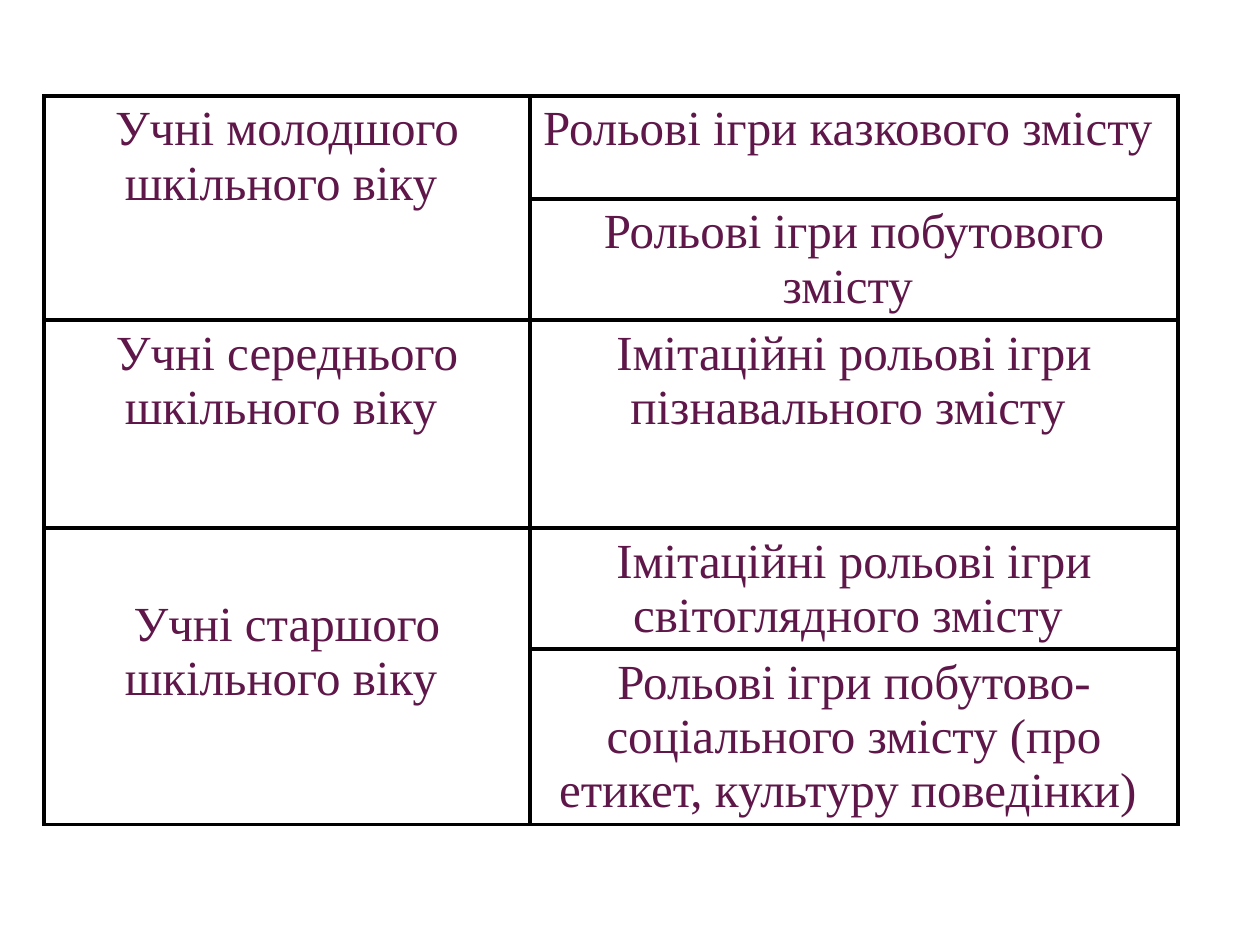
from dataclasses import dataclass

from lxml import etree
from pptx import Presentation
from pptx.dml.color import RGBColor
from pptx.enum.text import PP_ALIGN
from pptx.oxml.ns import qn
from pptx.util import Emu, Pt

CENTER = PP_ALIGN.CENTER
SCALE = 914400 // 126


@dataclass(frozen=True)
class Theme:
    font: str = "Times New Roman"
    size: int = 28
    ink: str = "5F174A"
    line: str = "000000"
    weight: float = 2.25


THEME = Theme()
LEFT, TOP = 44, 96
COLS = [486, 648]
ROWS = [103, 105, 208, 95, 113]
PAD = 70  # lowers the last age group by about one line

# Row, rows spanned, text, top margin
AGES = [
    (0, 2, "Учні молодшого шкільного віку ", None),
    (2, 1, "Учні середнього шкільного віку ", None),
    (3, 2, "Учні старшого шкільного віку ", PAD),
]
GAMES = [
    "Рольові ігри казкового змісту ",
    "Рольові ігри побутового змісту ",
    "Імітаційні рольові ігри пізнавального змісту ",
    "Імітаційні рольові ігри світоглядного змісту ",
    "Рольові ігри побутово-соціального змісту (про етикет, культуру поведінки) ",
]


def px(n):
    return Emu(n * SCALE)


def put_text(cell, text, size=THEME.size, color=THEME.ink, align=CENTER, top=None):
    if top is not None:
        cell.margin_top = px(top)
    para = cell.text_frame.paragraphs[0]
    para.alignment = align
    run = para.add_run()
    run.text = text
    run.font.name = THEME.font
    run.font.size = Pt(size)
    run.font.color.rgb = RGBColor.from_string(color)


def frame_cell(cell):
    """Draw all four borders and leave the cell unfilled."""
    props = cell._tc.get_or_add_tcPr()
    for side in ("lnL", "lnR", "lnT", "lnB"):
        line = etree.SubElement(props, qn(f"a:{side}"), w=str(Pt(THEME.weight)))
        fill = etree.SubElement(line, qn("a:solidFill"))
        etree.SubElement(fill, qn("a:srgbClr"), val=THEME.line)
    cell.fill.background()


def add_grid(slide):
    size = px(sum(COLS)), px(sum(ROWS))
    shape = slide.shapes.add_table(len(ROWS), len(COLS), px(LEFT), px(TOP), *size)
    table = shape.table
    table.first_row = table.horz_banding = False
    for col, width in zip(table.columns, COLS):
        col.width = px(width)
    for row, height in zip(table.rows, ROWS):
        row.height = px(height)
    for cell in table.iter_cells():
        frame_cell(cell)
    return table


def main():
    deck = Presentation()
    deck.slide_width, deck.slide_height = px(1260), px(945)
    slide = deck.slides.add_slide(deck.slide_layouts[6])
    table = add_grid(slide)
    for row, span, text, top in AGES:
        cell = table.cell(row, 0)
        if span > 1:
            cell.merge(table.cell(row + span - 1, 0))
        put_text(cell, text, top=top)
    for row, text in enumerate(GAMES):
        put_text(table.cell(row, 1), text)
    deck.save("out.pptx")


if __name__ == "__main__":
    main()
